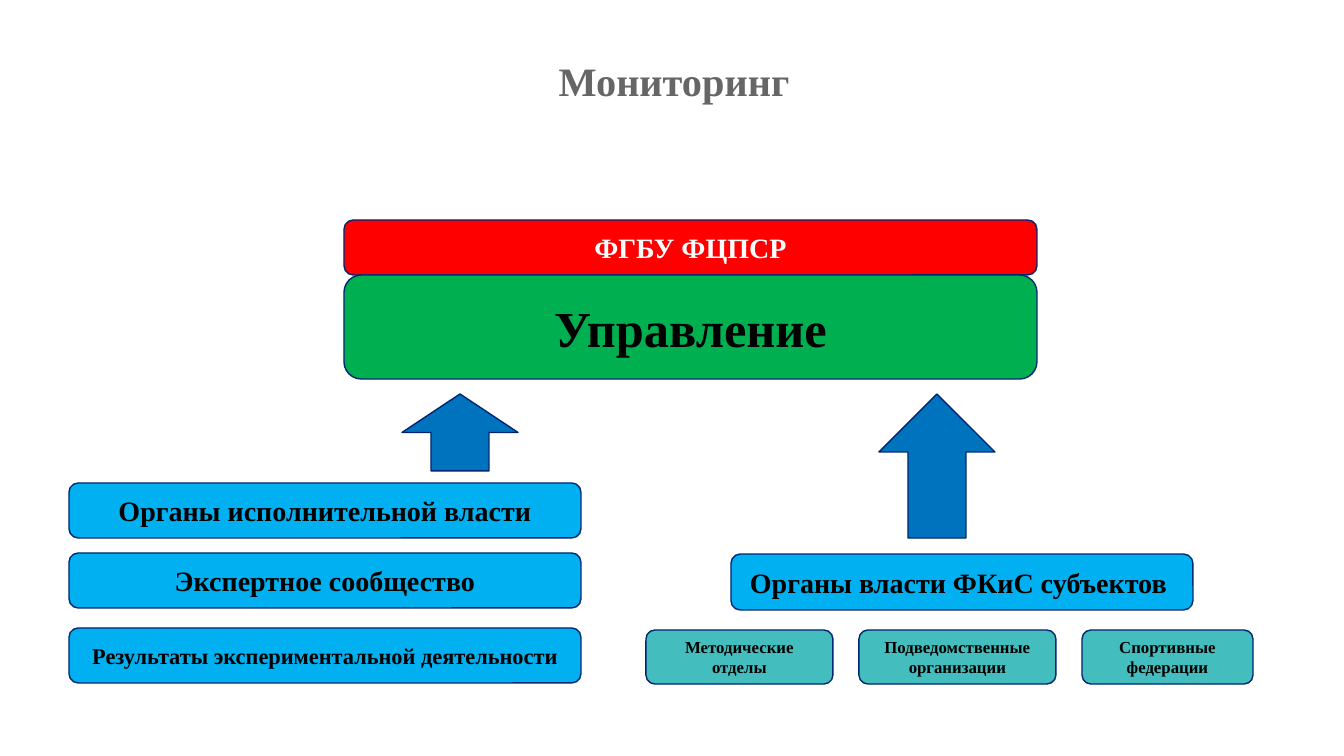
from pptx import Presentation
from pptx.dml.color import RGBColor
from pptx.enum.shapes import MSO_SHAPE
from pptx.enum.text import MSO_ANCHOR, MSO_AUTO_SIZE, PP_ALIGN
from pptx.util import Pt

PX = 914400 / 100.8
FONT = "Times New Roman"
BLACK = RGBColor(0x00, 0x00, 0x00)
WHITE = RGBColor(0xFF, 0xFF, 0xFF)
GREY = RGBColor(0x66, 0x66, 0x66)
RED = RGBColor(0xFF, 0x00, 0x00)
GREEN = RGBColor(0x00, 0xB0, 0x50)
SKY = RGBColor(0x00, 0xB0, 0xF0)
TEAL = RGBColor(0x43, 0xBD, 0xBD)
BLUE = RGBColor(0x00, 0x73, 0xBF)
NAVY = RGBColor(0x00, 0x26, 0x71)


def px(*lengths):
    return [round(n * PX) for n in lengths]


def write(tf, text, size=20, color=BLACK, spacing=1.0):
    """Put one bold centred paragraph in the middle of the frame."""
    tf.word_wrap = True
    tf.auto_size = MSO_AUTO_SIZE.NONE
    tf.vertical_anchor = MSO_ANCHOR.MIDDLE
    p = tf.paragraphs[0]
    p.alignment = PP_ALIGN.CENTER
    p.line_spacing = spacing
    r = p.add_run()
    r.text = text
    r.font.name = FONT
    r.font.size = Pt(size)
    r.font.bold = True
    r.font.color.rgb = color


class Diagram:
    def __init__(self, prs):
        self.s = prs.slides.add_slide(prs.slide_layouts[5])

    def title(self, text, x, y, w, h):
        sp = self.s.shapes.title
        sp.left, sp.top, sp.width, sp.height = px(x, y, w, h)
        write(sp.text_frame, text, size=28.8, color=GREY, spacing=0.9)

    def shape(self, kind, x, y, w, h, fill):
        sp = self.s.shapes.add_shape(kind, *px(x, y, w, h))
        sp.shadow.inherit = False
        sp.fill.solid()
        sp.fill.fore_color.rgb = fill
        sp.line.color.rgb = NAVY
        sp.line.width = Pt(1)
        return sp

    def box(self, text, x, y, w, h, fill=SKY, **fmt):
        sp = self.shape(MSO_SHAPE.ROUNDED_RECTANGLE, x, y, w, h, fill)
        write(sp.text_frame, text, **fmt)

    def arrow(self, x, y, w, h):
        self.shape(MSO_SHAPE.UP_ARROW, x, y, w, h, BLUE)


def main():
    prs = Presentation()
    prs.slide_width, prs.slide_height = px(1344, 756)
    d = Diagram(prs)
    d.title("Мониторинг", 69, 56, 1210, 55)

    d.box("ФГБУ ФЦПСР", 344, 220, 693, 55, fill=RED, color=WHITE)
    d.box("Управление", 344, 275, 693, 104, fill=GREEN, size=36)
    d.arrow(402, 394, 116, 77)
    d.arrow(879, 394, 116, 144)

    for text, y, size in (
        ("Органы исполнительной власти", 483, 20),
        ("Экспертное сообщество", 553, 20),
        ("Результаты экспериментальной деятельности", 628, 16),
    ):
        d.box(text, 69, y, 512, 55, size=size)

    d.box("Органы власти ФКиС субъектов ", 731, 554, 462, 56)
    x, gap = 646, 26
    for text, w in (
        ("Методические отделы", 187),
        ("Подведомственные организации", 197),
        ("Спортивные федерации", 171),
    ):
        d.box(text, x, 630, w, 54, fill=TEAL, size=12)
        x += w + gap

    prs.save("out.pptx")


if __name__ == "__main__":
    main()
